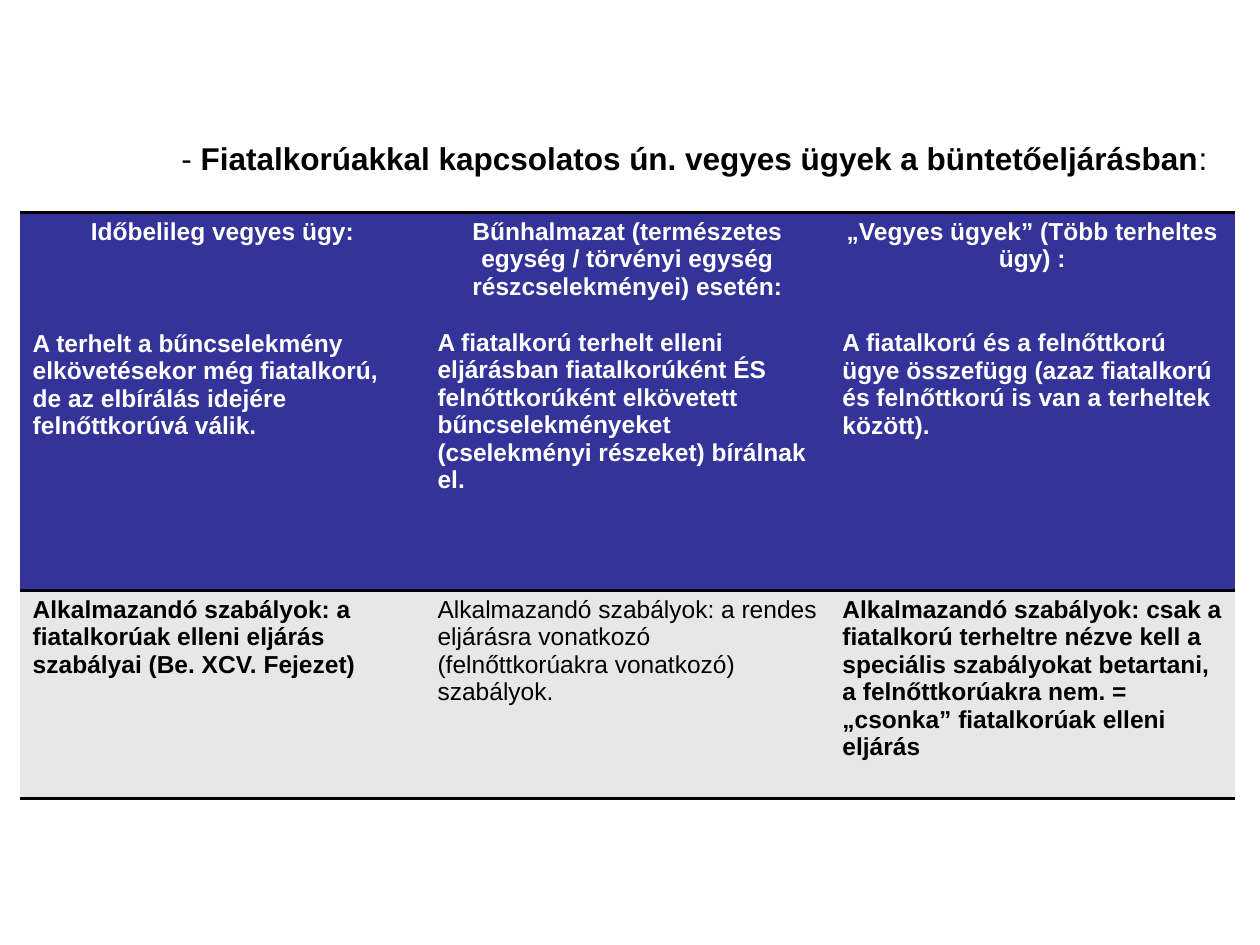
from lxml import etree
from pptx import Presentation
from pptx import util as u
from pptx.dml import color
from pptx.enum import text
from pptx.oxml import ns

COLORS = {"ink": "000000", "header": "333399", "body": "E7E7E7", "light": "FFFFFF"}
FONT = "Arial"
LINE_HEIGHT = 16.1

CASES = [
    ("Időbelileg vegyes ügy:", 3,
     "A terhelt a bűncselekmény elkövetésekor még fiatalkorú, de az elbírálás "
     "idejére felnőttkorúvá válik."),
    ("Bűnhalmazat (természetes egység / törvényi egység részcselekményei) esetén:", 1,
     "A fiatalkorú terhelt elleni eljárásban fiatalkorúként ÉS felnőttkorúként "
     "elkövetett bűncselekményeket (cselekményi részeket) bírálnak el."),
    ("„Vegyes ügyek” (Több terheltes ügy) :", 2,
     "A fiatalkorú és a felnőttkorú ügye összefügg (azaz fiatalkorú és felnőttkorú "
     "is van a terheltek között)."),
]
RULES = [
    ("Alkalmazandó szabályok: a fiatalkorúak elleni eljárás szabályai "
     "(Be. XCV. Fejezet)", True),
    ("Alkalmazandó szabályok: a rendes eljárásra vonatkozó (felnőttkorúakra "
     "vonatkozó) szabályok.", False),
    ("Alkalmazandó szabályok: csak a fiatalkorú terheltre nézve kell a speciális "
     "szabályokat betartani, a felnőttkorúakra nem. = „csonka” fiatalkorúak elleni "
     "eljárás", True),
]


def rgb(name):
    return color.RGBColor.from_string(COLORS[name])


def add_run(paragraph, words, size, ink, bold):
    run = paragraph.add_run()
    run.text = words
    run.font.name = FONT
    run.font.size = u.Pt(size)
    run.font.bold = bold
    run.font.color.rgb = rgb(ink)


def set_borders(cell, visible):
    properties = cell._tc.get_or_add_tcPr()
    for index, tag in enumerate(("a:lnL", "a:lnR", "a:lnT", "a:lnB")):
        line = etree.Element(ns.qn(tag), w=str(u.Pt(2)))
        if tag in visible:
            fill = etree.SubElement(line, ns.qn("a:solidFill"))
            etree.SubElement(fill, ns.qn("a:srgbClr"), val=COLORS["ink"])
        else:
            etree.SubElement(line, ns.qn("a:noFill"))
        properties.insert(index, line)


def format_cell(cell, fill, borders):
    cell.margin_left = cell.margin_right = u.Inches(0.1)
    cell.margin_top = cell.margin_bottom = u.Inches(0.04)
    cell.vertical_anchor = text.MSO_ANCHOR.TOP
    cell.fill.solid()
    cell.fill.fore_color.rgb = rgb(fill)
    set_borders(cell, borders)


def place_title(slide, left, top, width, height):
    title = slide.shapes.title
    title.left, title.top, title.width, title.height = map(
        u.Inches, (left, top, width, height))
    frame = title.text_frame
    frame.word_wrap = True
    frame.auto_size = text.MSO_AUTO_SIZE.NONE
    frame.vertical_anchor = text.MSO_ANCHOR.TOP
    paragraph = frame.paragraphs[0]
    paragraph.alignment = text.PP_ALIGN.LEFT
    add_run(paragraph, "- ", 18, "ink", False)
    add_run(paragraph, "Fiatalkorúakkal kapcsolatos ún. vegyes ügyek a büntetőeljárásban",
            18, "ink", True)
    add_run(paragraph, ":", 18, "ink", False)


def place_table(slide, left, top, width, row_heights):
    frame = slide.shapes.add_table(
        len(row_heights), len(CASES), u.Inches(left), u.Inches(top),
        u.Inches(width), u.Inches(sum(row_heights)))
    table = frame.table
    table.horz_banding = False
    for row, height in zip(table.rows, row_heights):
        row.height = u.Inches(height)
    for index, ((heading, gap_lines, description), (rule, bold)) in enumerate(
            zip(CASES, RULES)):
        header_cell, rule_cell = table.cell(0, index), table.cell(1, index)
        format_cell(header_cell, "header", ("a:lnT", "a:lnB"))
        format_cell(rule_cell, "body", ("a:lnT", "a:lnB"))

        paragraph = header_cell.text_frame.paragraphs[0]
        paragraph.alignment = text.PP_ALIGN.CENTER
        add_run(paragraph, heading, 14, "light", True)

        paragraph = header_cell.text_frame.add_paragraph()
        paragraph.alignment = text.PP_ALIGN.LEFT
        paragraph.space_before = u.Pt(gap_lines * LINE_HEIGHT)
        add_run(paragraph, description, 14, "light", True)

        paragraph = rule_cell.text_frame.paragraphs[0]
        paragraph.alignment = text.PP_ALIGN.LEFT
        add_run(paragraph, rule, 14, "ink", bold)


def main():
    presentation = Presentation()
    presentation.slide_width = u.Inches(10)
    presentation.slide_height = u.Inches(7.5)
    slide = presentation.slides.add_slide(presentation.slide_layouts[5])
    place_title(slide, 1.34, 1.05, 8.45, 0.5)
    place_table(slide, 0.16, 1.69, 9.64, (3, 1.65))
    presentation.save("out.pptx")


if __name__ == "__main__":
    main()
